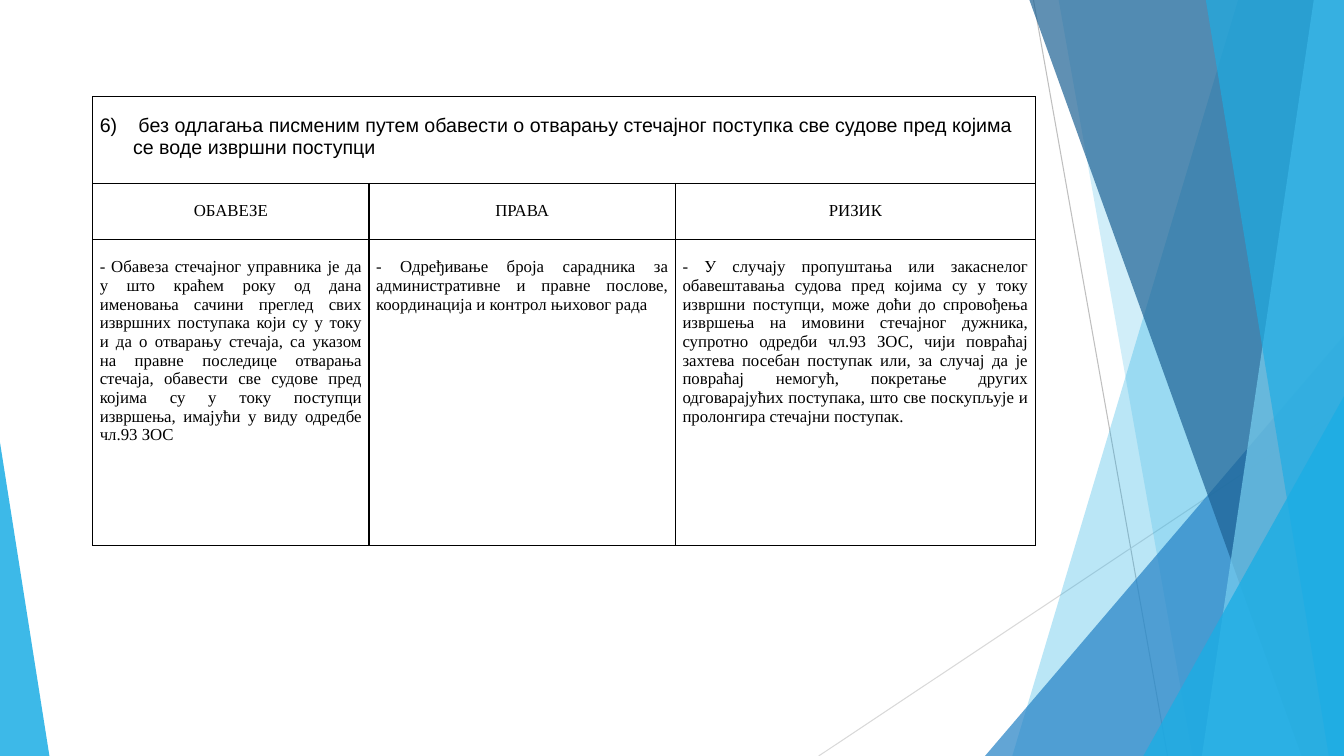
from lxml.etree import SubElement
from pptx import Presentation
from pptx.dml.color import RGBColor
from pptx.enum.shapes import MSO_CONNECTOR, MSO_SHAPE
from pptx.enum.text import PP_ALIGN
from pptx.oxml.ns import qn
from pptx.util import Inches, Pt

BLACK = RGBColor(0x00, 0x00, 0x00)
GREY = RGBColor(0xBF, 0xBF, 0xBF)
PALE = RGBColor(0xD9, 0xD9, 0xD9)
SKY = RGBColor(0x1C, 0xAD, 0xE4)
BLUE = RGBColor(0x26, 0x83, 0xC6)
NAVY = RGBColor(0x1D, 0x62, 0x94)
LIGHT = RGBColor(0x77, 0xCE, 0xEF)
WIDE, HIGH = 13.33, 7.5


def tint(shape, color, alpha):
    shape.shadow.inherit = False
    shape.line.fill.background()
    shape.fill.solid()
    shape.fill.fore_color.rgb = color
    tone = shape.fill._xPr.find(qn("a:solidFill"))[0]
    SubElement(tone, qn("a:alpha"), val=str(alpha * 1000))


def border(cell):
    props = cell._tc.get_or_add_tcPr()
    for side in ("lnL", "lnR", "lnT", "lnB"):
        edge = SubElement(props, qn("a:" + side), w=str(Pt(1)))
        solid = SubElement(edge, qn("a:solidFill"))
        SubElement(solid, qn("a:srgbClr"), val=str(BLACK))


deck = Presentation()
deck.slide_width, deck.slide_height = Inches(WIDE), Inches(HIGH)
slide = deck.slides.add_slide(deck.slide_layouts[6])
shapes = slide.shapes

rays = [
    (10.25, 0, 11.58, HIGH, GREY),
    (WIDE, 4.03, 8.12, HIGH, PALE),
]
for *ends, color in rays:
    ray = shapes.add_connector(MSO_CONNECTOR.STRAIGHT, *map(Inches, ends))
    ray.line.color.rgb = color
    ray.line.width = Pt(0.75)
    SubElement(ray._element.spPr, qn("a:effectLst"))

facets = [
    ("band", (12.28, 10.04), SKY, 30),
    ("band", (10.5, 11.83), SKY, 20),
    ("peak", (9.77, 3.33, 3.56, 1), BLUE, 72),
    ("band", (10.21, 12.91), NAVY, 70),
    ("band", (13.03, 11.92), LIGHT, 70),
    ("band", (11.96, 13.18), SKY, 65),
    ("peak", (11.34, 3.93, 1.99, 1), SKY, 80),
    ("peak", (0, 4.39, 0.49, 0), SKY, 85),
]
for kind, place, color, alpha in facets:
    if kind == "band":
        top, base = place
        pen = shapes.build_freeform(Inches(top), 0)
        spots = [(WIDE, 0), (WIDE, HIGH), (base, HIGH)]
        pen.add_line_segments([(Inches(x), Inches(y)) for x, y in spots])
        facet = pen.convert_to_shape()
    else:
        left, top, width, apex = place
        box = map(Inches, (left, top, width, HIGH - top))
        facet = shapes.add_shape(MSO_SHAPE.ISOSCELES_TRIANGLE, *box)
        facet.adjustments[0] = apex
    tint(facet, color, alpha)

cols = [2.74, 3.04, 3.57]
rows = [0.86, 0.56, 3.03]
texts = [
    ["6)\t без одлагања писменим путем обавести о отварању стечајног поступка све судове пред којима се воде извршни поступци", "", ""],
    ["ОБАВЕЗЕ", "ПРАВА", "РИЗИК"],
    [
        "- Обавеза стечајног управника је да у што краћем року од дана именовања сачини преглед свих извршних поступака који су у току и да о отварању стечаја, са указом на правне последице отварања стечаја, обавести све судове пред којима су у току поступци извршења, имајући у виду одредбе чл.93 ЗОС",
        "- Одређивање броја сарадника за административне и правне послове, координација и контрол њиховог рада",
        "- У случају пропуштања или закаснелог обавештавања судова пред којима су у току извршни поступци, може доћи до спровођења извршења на имовини стечајног дужника, супротно одредби чл.93 ЗОС, чији повраћај захтева посебан поступак или, за случај да је повраћај немогућ, покретање других одговарајућих поступака, што све поскупљује и пролонгира стечајни поступак.",
    ],
]
looks = [
    (PP_ALIGN.LEFT, {"name": "Arial", "size": Pt(14)}),
    (PP_ALIGN.CENTER, {"name": "Times New Roman", "size": Pt(12)}),
    (PP_ALIGN.JUSTIFY, {"name": "Times New Roman", "size": Pt(12)}),
]
pads = {
    "margin_left": Inches(0.07),
    "margin_right": Inches(0.07),
    "margin_top": Inches(0.18),
    "margin_bottom": 0,
}

area = map(Inches, (0.92, 0.96, sum(cols), sum(rows)))
table = shapes.add_table(len(rows), len(cols), *area).table
table.first_row = table.horz_banding = False
for col, width in zip(table.columns, cols):
    col.width = Inches(width)
for row, high, line, (align, font) in zip(table.rows, rows, texts, looks):
    row.height = Inches(high)
    for cell, text in zip(row.cells, line):
        border(cell)
        cell.fill.background()
        for key, value in pads.items():
            setattr(cell, key, value)
        para = cell.text_frame.paragraphs[0]
        para.alignment = align
        for key, value in font.items():
            setattr(para.font, key, value)
        if text:
            run = para.add_run()
            run.text = text
            for key, value in font.items():
                setattr(run.font, key, value)
            run.font.color.rgb = BLACK

head = table.cell(0, 0)
head.merge(table.cell(0, 2))
props = head.text_frame.paragraphs[0]._p.get_or_add_pPr()
props.set("marL", str(Inches(0.33)))
props.set("indent", str(-Inches(0.33)))

deck.save("out.pptx")
